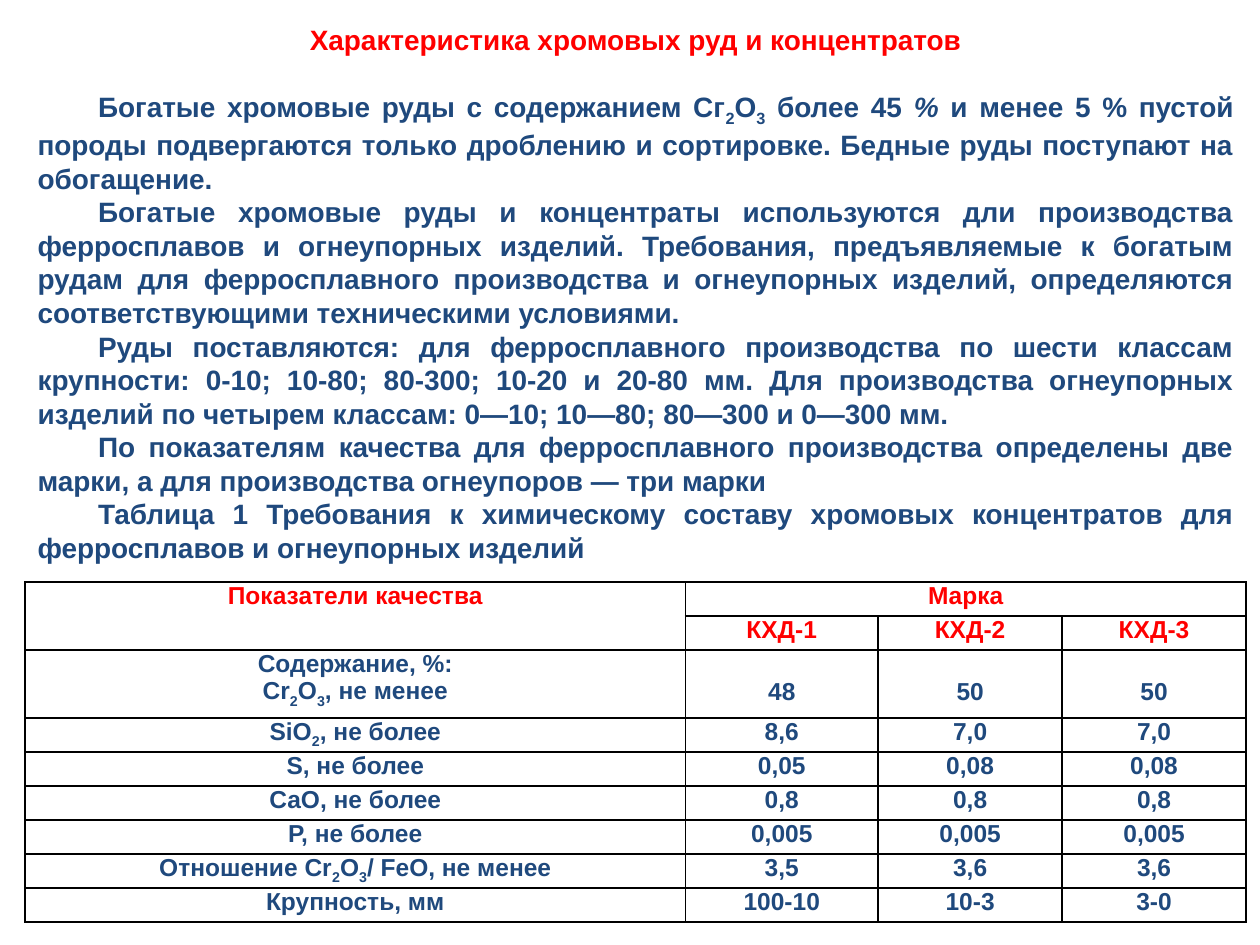
from lxml.etree import SubElement
from pptx import Presentation
from pptx.dml.color import RGBColor
from pptx.enum.text import MSO_AUTO_SIZE as AutoSize, PP_ALIGN as Align
from pptx.oxml.ns import qn
from pptx.util import Inches, Pt

COLORS = {"accent": "FF0000", "text": "1F497D", "border": "000000", "cell": "FFFFFF"}

# Markup: runs are parted by "|"; "_" starts a subscript run, "*" an italic one
TITLE = "Характеристика хромовых руд и концентратов"
BODY = [
    "Богатые хромовые руды с содержанием Сг|_2|О|_3| более 45 |*% |и менее 5 % пустой породы "
    "подвергаются только дроблению и сортировке. Бедные руды поступают на обогащение.",
    "Богатые хромовые руды и концентраты используются дли производства ферросплавов и "
    "огнеупорных изделий. Требования, предъявляемые к богатым рудам для ферросплавного "
    "производства и огнеупорных изделий, определяются соответствующими техническими условиями.",
    "Руды поставляются: для ферросплавного производства по шести классам крупности: 0-10; "
    "10-80; 80-300; 10-20 и 20-80 мм. Для производства огнеупорных изделий по четырем "
    "классам: 0—10; 10—80; 80—300 и 0—300 мм.",
    "По показателям качества для ферросплавного производства определены две марки, "
    "а для производства огнеупоров — три марки",
    "Таблица 1 Требования к химическому составу хромовых концентратов для ферросплавов "
    "и огнеупорных изделий",
]
HEADER_ROWS = 2
CONTENT_ROW = 2
ROWS = [
    ["Показатели качества", "Марка", "", ""],
    ["", "КХД-1", "КХД-2", "КХД-3"],
    ["Содержание, %:\nCr|_2|O|_3|, не менее", "48", "50", "50"],
    ["SiO|_2|, не более", "8,6", "7,0", "7,0"],
    ["S, не более", "0,05", "0,08", "0,08"],
    ["СаО, не более", "0,8", "0,8", "0,8"],
    ["Р, не более", "0,005", "0,005", "0,005"],
    ["Отношение Cr|_2|O|_3|/ FeO, не менее", "3,5", "3,6", "3,6"],
    ["Крупность, мм", "100-10", "10-3", "3-0"],
]
COLUMN_WIDTHS = [5.24, 1.53, 1.46, 1.46]
ROW_HEIGHT = 0.27
LINE_HEIGHT = 0.22


class SlideBuilder:
    font_name = "Arial"
    body_size = 16
    table_size = 14

    def __init__(self, slide):
        self.slide = slide

    def add_runs(self, paragraph, markup, size, color, align):
        paragraph.alignment = align
        for part in markup.split("|"):
            run = paragraph.add_run()
            run.text = part.lstrip("_*")
            font = run.font
            font.name, font.size, font.bold = self.font_name, Pt(size), True
            font.color.rgb = RGBColor.from_string(COLORS[color])
            if part.startswith("_"):
                run._r.get_or_add_rPr().set("baseline", "-25000")
            elif part.startswith("*"):
                font.italic = True

    def add_text(self, left, top, width, height, title, body):
        box = self.slide.shapes.add_textbox(
            Inches(left), Inches(top), Inches(width), Inches(height))
        frame = box.text_frame
        frame.word_wrap = True
        frame.auto_size = AutoSize.SHAPE_TO_FIT_TEXT
        heading = frame.paragraphs[0]
        self.add_runs(heading, title, self.body_size, "accent", Align.CENTER)
        heading.space_after = Pt(19)
        for markup in body:
            paragraph = frame.add_paragraph()
            paragraph._p.get_or_add_pPr().set("indent", str(Inches(0.48)))
            self.add_runs(paragraph, markup, self.body_size, "text", Align.JUSTIFY)

    def add_borders(self, cell):
        properties = cell._tc.get_or_add_tcPr()
        for side in ("lnL", "lnR", "lnT", "lnB"):
            line = SubElement(properties, qn(f"a:{side}"), w=str(Pt(1)))
            fill = SubElement(line, qn("a:solidFill"))
            SubElement(fill, qn("a:srgbClr"), val=COLORS["border"])

    def add_cell(self, cell, text, color):
        cell.margin_left = cell.margin_right = Inches(0.07)
        cell.margin_top = cell.margin_bottom = 0
        self.add_borders(cell)
        cell.fill.solid()
        cell.fill.fore_color.rgb = RGBColor.from_string(COLORS["cell"])
        frame = cell.text_frame
        for index, markup in enumerate(text.split("\n")):
            paragraph = frame.add_paragraph() if index else frame.paragraphs[0]
            self.add_runs(paragraph, markup, self.table_size, color, Align.CENTER)

    def add_table(self, left, top, rows):
        heights = [ROW_HEIGHT * (2 if index == CONTENT_ROW else 1) for index in range(len(rows))]
        table = self.slide.shapes.add_table(
            len(rows), len(COLUMN_WIDTHS), Inches(left), Inches(top),
            Inches(sum(COLUMN_WIDTHS)), Inches(sum(heights))).table
        table.first_row = table.horz_banding = False
        for column, width in zip(table.columns, COLUMN_WIDTHS):
            column.width = Inches(width)
        for row_index, texts in enumerate(rows):
            table.rows[row_index].height = Inches(heights[row_index])
            color = "accent" if row_index < HEADER_ROWS else "text"
            for column_index, text in enumerate(texts):
                self.add_cell(table.cell(row_index, column_index), text, color)
        return table


def main():
    presentation = Presentation()
    presentation.slide_width, presentation.slide_height = Inches(10), Inches(7.5)
    slide = presentation.slides.add_slide(presentation.slide_layouts[6])
    builder = SlideBuilder(slide)

    # Title and body text
    builder.add_text(0.2, 0.13, 9.69, 4.41, TITLE, BODY)

    # Quality table
    table = builder.add_table(0.2, 4.62, ROWS)
    table.cell(0, 0).merge(table.cell(1, 0))
    table.cell(0, 1).merge(table.cell(0, 3))
    # Values stand level with the second line of their label
    for column_index in range(1, len(COLUMN_WIDTHS)):
        table.cell(CONTENT_ROW, column_index).margin_top = Inches(LINE_HEIGHT)

    presentation.save("out.pptx")


if __name__ == "__main__":
    main()
